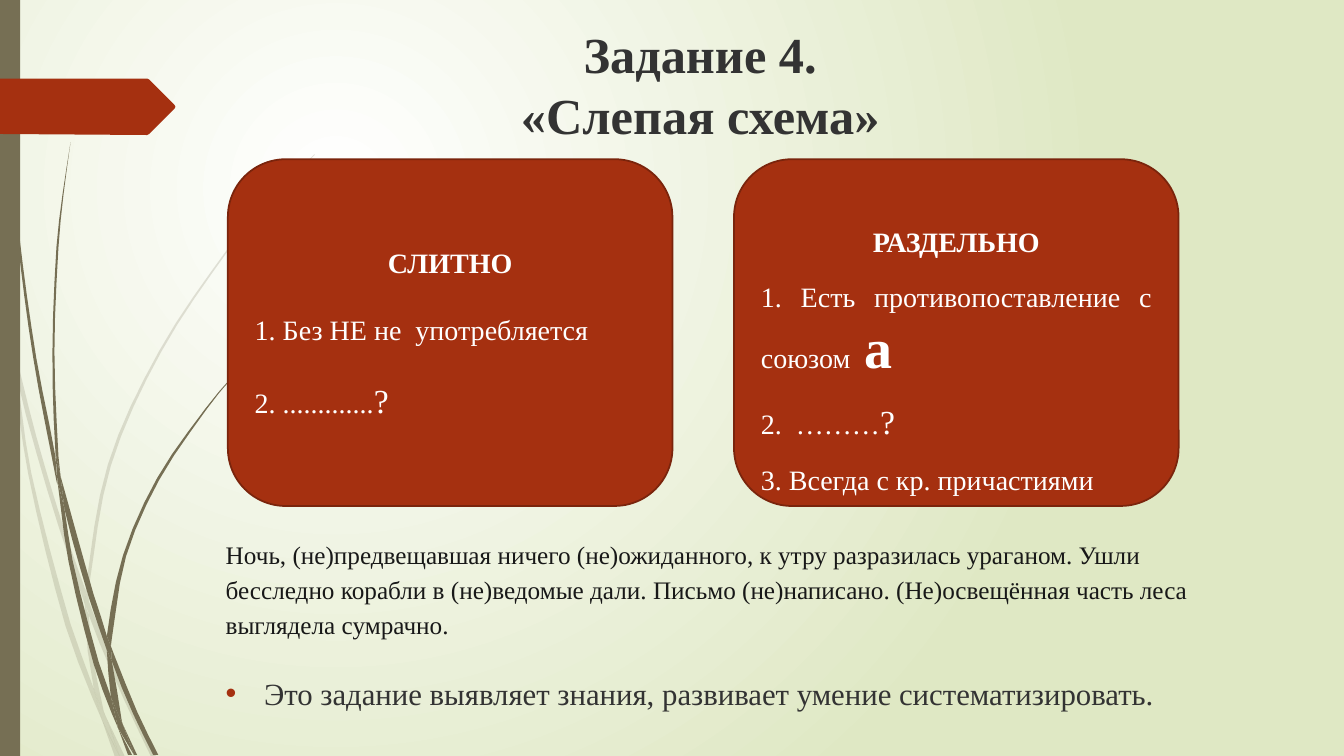
from math import dist
from lxml import etree
from pptx import Presentation
from pptx.dml.color import RGBColor
from pptx.enum.shapes import MSO_SHAPE
from pptx.enum.text import MSO_ANCHOR, PP_ALIGN
from pptx.oxml.ns import qn
from pptx.util import Pt

PX = 9144
FONT = "Times New Roman"
RECT, ROUND = MSO_SHAPE.RECTANGLE, MSO_SHAPE.ROUNDED_RECTANGLE
MIDDLE, TOP = MSO_ANCHOR.MIDDLE, MSO_ANCHOR.TOP
LEFT, CENTER, JUSTIFY = PP_ALIGN.LEFT, PP_ALIGN.CENTER, PP_ALIGN.JUSTIFY
HUES = {"white": "FFFFFF", "lime": "DFE8C4", "olive": "766F54", "rust": "A53010",
        "edge": "7A240C", "title": "333333", "ink": "181818"}

# Each blade of grass has two sides, both running from its first tip to its last.
PALE = [
    ([(0, 282), (9, 322), (11, 350)], [(0, 299), (10, 344), (11, 350)]),
    ([(14, 345), (36, 433), (62, 520), (85, 586)],
     [(14, 345), (17, 376), (36, 449), (58, 522), (84, 599)]),
    ([(88, 596), (92, 607), (127, 692), (155, 751)],
     [(88, 596), (88, 610), (123, 694), (150, 751)]),
    ([(105, 711), (124, 751)], [(105, 711), (119, 751)]),
    ([(11, 350), (17, 376), (31, 469), (70, 619), (93, 683), (99, 707), (101, 714)],
     [(11, 350), (28, 470), (65, 621), (92, 693), (101, 714)]),
    ([(84, 599), (88, 610), (91, 646), (103, 706), (105, 711)],
     [(84, 599), (87, 646), (93, 683), (96, 692), (105, 711)]),
    ([(312, 153), (268, 197), (228, 244), (158, 348), (107, 461), (85, 585), (88, 596)],
     [(312, 154), (268, 198), (229, 245), (160, 349), (110, 462), (88, 584), (88, 596)]),
    ([(101, 714), (119, 751)], [(101, 714), (114, 751)]),
    ([(85, 586), (88, 596), (88, 610)], [(84, 599), (88, 608), (88, 610)]),
    ([(93, 683), (96, 692), (105, 711), (119, 751)],
     [(93, 683), (99, 707), (101, 714), (119, 751)]),
]
DARK = [
    ([(4, 0), (5, 48), (8, 109), (19, 232), (36, 355), (55, 453), (57, 481)],
     [(3, 0), (4, 48), (7, 110), (17, 233), (33, 355), (56, 477), (57, 481)]),
    ([(60, 472), (93, 590), (106, 631), (106, 645)],
     [(60, 472), (64, 505), (88, 592), (106, 645)]),
    ([(110, 641), (113, 649), (136, 706), (157, 749)],
     [(110, 641), (111, 656), (132, 708), (152, 749)]),
    ([(57, 477), (64, 505), (72, 556), (98, 657), (110, 691), (116, 717), (117, 722)],
     [(57, 477), (68, 557), (93, 659), (111, 708), (117, 722)]),
    ([(70, 141), (62, 193), (56, 245), (52, 349), (55, 449), (60, 472)],
     [(70, 141), (63, 193), (58, 245), (54, 349), (58, 453), (60, 472)]),
    ([(122, 719), (136, 749)], [(122, 719), (133, 749)]),
    ([(55, 449), (60, 472), (64, 505)], [(55, 449), (57, 477), (64, 505)]),
    ([(260, 344), (231, 373), (204, 405), (156, 474), (122, 551), (106, 631), (110, 641)],
     [(261, 344), (231, 374), (205, 406), (158, 476), (125, 552), (111, 633), (110, 641)]),
    ([(117, 722), (131, 749)], [(117, 722), (127, 749)]),
    ([(106, 645), (111, 656), (121, 716), (122, 719)],
     [(106, 645), (110, 691), (116, 706), (122, 719)]),
    ([(106, 631), (110, 641), (111, 656)], [(106, 631), (106, 645), (111, 656)]),
    ([(110, 691), (116, 706), (122, 719), (133, 749)],
     [(110, 691), (116, 717), (117, 722), (133, 749)]),
]
ARROW = [(0, 78), (146, 78), (148, 79), (173, 104), (174, 106),
         (173, 108), (148, 133), (146, 134), (0, 133)]


def smooth(knots):
    """Return points of a Hermite curve through the knots, more on long spans."""
    ends = [knots[0]] + knots + [knots[-1]]
    out = []
    for a, b, c, d in zip(ends, ends[1:], ends[2:], ends[3:]):
        span = dist(b, c)
        head, tail = span / (dist(a, b) + span), span / (span + dist(c, d))
        steps = min(4, 1 + int(span // 40))
        for i in range(steps):
            t = i / steps
            out.append([q * (2 * t ** 3 - 3 * t * t + 1) + r * (3 * t * t - 2 * t ** 3)
                        + (r - p) * head * t * (1 - t) ** 2
                        + (s - q) * tail * t * t * (t - 1)
                        for p, q, r, s in zip(a, b, c, d)])
    return out + [knots[-1]]


class Deck:
    def __init__(self):
        self.prs = Presentation()
        self.prs.slide_width, self.prs.slide_height = 1333 * PX, 750 * PX
        self.slide = self.prs.slides.add_slide(self.prs.slide_layouts[5])
        self.shapes = self.slide.shapes

    def hue(self, name):
        return RGBColor.from_string(HUES[name])

    def glow(self, inner, outer):
        """Fill the background with a round gradient."""
        fill = self.slide.background.fill
        fill.gradient()
        for stop, name, pos in zip(fill.gradient_stops, (inner, outer), (0, 1)):
            stop.color.rgb, stop.position = self.hue(name), pos
        grad = self.slide.element.find(".//" + qn("a:gradFill"))
        ring = etree.Element(qn("a:path"), path="circle")
        etree.SubElement(ring, qn("a:fillToRect"), l="50000", t="50000", r="100000", b="100000")
        grad.replace(grad.find(qn("a:lin")), ring)

    def paint(self, shape, fill, line=None):
        shape.shadow.inherit = False
        shape.fill.solid()
        shape.fill.fore_color.rgb = self.hue(fill)
        if line:
            shape.line.color.rgb, shape.line.width = self.hue(line), Pt(1.25)
        else:
            shape.line.fill.background()
        return shape

    def box(self, kind, x, y, w, h, fill, line=None):
        shape = self.shapes.add_shape(kind, x * PX, y * PX, w * PX, h * PX)
        return self.paint(shape, fill, line)

    def free(self, shapes, points, fill, alpha=None):
        spots = [(round(x * PX), round(y * PX)) for x, y in points]
        pen = shapes.build_freeform(*spots[0], scale=1.0)
        pen.add_line_segments(spots[1:], close=True)
        shape = self.paint(pen.convert_to_shape(), fill)
        if alpha:
            tint = shape.element.spPr.find(".//" + qn("a:srgbClr"))
            etree.SubElement(tint, qn("a:alpha"), val=str(alpha * 1000))

    def grass(self, blades, fill, alpha=None):
        group = self.shapes.add_group_shape()
        for near, far in blades:
            self.free(group.shapes, smooth(near) + smooth(far)[::-1], fill, alpha)

    def text(self, x, y, w, h):
        return self.shapes.add_textbox(x * PX, y * PX, w * PX, h * PX)

    def title(self, x, y, w, h, lines):
        head = self.shapes.title
        head.left, head.top, head.width, head.height = (n * PX for n in (x, y, w, h))
        para = self.para(self.frame(head, TOP), [(lines[0], 36, True)], "title", CENTER)
        for line in lines[1:]:
            para.add_line_break()
            self.run(para, line, 36, True, "title")

    def frame(self, shape, anchor):
        frame = shape.text_frame
        frame.word_wrap, frame.vertical_anchor = True, anchor
        return frame

    def run(self, para, text, size, bold, hue):
        run = para.add_run()
        run.text = text
        font = run.font
        font.name, font.size, font.bold = FONT, Pt(size), bold
        font.color.rgb = self.hue(hue)

    def para(self, frame, runs, hue, align=LEFT, before=0, after=0, lead=1.0):
        first = frame.paragraphs[0]
        para = frame.add_paragraph() if first.runs else first
        para.alignment, para.line_spacing = align, lead
        para.space_before, para.space_after = Pt(before), Pt(after)
        for text, size, bold in runs:
            self.run(para, text, size, bold, hue)
        return para

    def number(self, para):
        props = para._p.get_or_add_pPr()
        etree.SubElement(props, qn("a:buAutoNum"), type="arabicPeriod")

    def bullet(self, para, hue, gap):
        props = para._p.get_or_add_pPr()
        props.set("marL", str(gap * PX))
        props.set("indent", str(-gap * PX))
        tint = etree.SubElement(props, qn("a:buClr"))
        etree.SubElement(tint, qn("a:srgbClr"), val=HUES[hue])
        etree.SubElement(props, qn("a:buFont"), typeface="Arial")
        etree.SubElement(props, qn("a:buChar"), char="•")


def main():
    deck = Deck()
    deck.glow("white", "lime")
    deck.grass(PALE, "olive", 20)
    deck.grass(DARK, "olive")
    deck.box(RECT, 0, 0, 20, 750, "olive")
    deck.free(deck.shapes, ARROW, "rust")
    deck.title(207, 18, 975, 140, ["Задание 4.", "«Слепая схема»"])

    joint, apart = [deck.frame(deck.box(ROUND, x, 158, 441, 344, "rust", "edge"), MIDDLE)
                    for x in (226, 728)]
    deck.para(joint, [("СЛИТНО", 20, True)], "white", CENTER)
    for runs in ([("1. Без НЕ не  употребляется", 20, False)],
                 [("2. .............", 20, False), ("?", 24, False)]):
        deck.para(joint, runs, "white", JUSTIFY, before=24)

    apart.margin_top = 60 * PX
    deck.para(apart, [("РАЗДЕЛЬНО", 20, True)], "white", CENTER, after=15)
    for runs in ([(" Есть противопоставление с союзом  ", 20, False), ("а", 40, True)],
                 [("  ………", 20, False), ("?", 24, False)],
                 [(" Всегда с кр. причастиями", 20, False)]):
        deck.number(deck.para(apart, runs, "white", JUSTIFY, after=15))

    body = deck.frame(deck.text(214, 526, 1028, 197), TOP)
    deck.para(body, [("Ночь, (не)предвещавшая ничего (не)ожиданного, к утру разразилась ураганом. "
                      "Ушли бесследно корабли в (не)ведомые дали. Письмо (не)написано. "
                      "(Не)освещённая часть леса выглядела сумрачно.", 18, False)],
              "ink", before=10, after=15, lead=1.15)
    note = deck.para(body, [("Это задание выявляет знания, развивает умение систематизировать.",
                             22, False)], "title", before=10)
    deck.bullet(note, "rust", 38)
    deck.prs.save("out.pptx")


if __name__ == "__main__":
    main()
